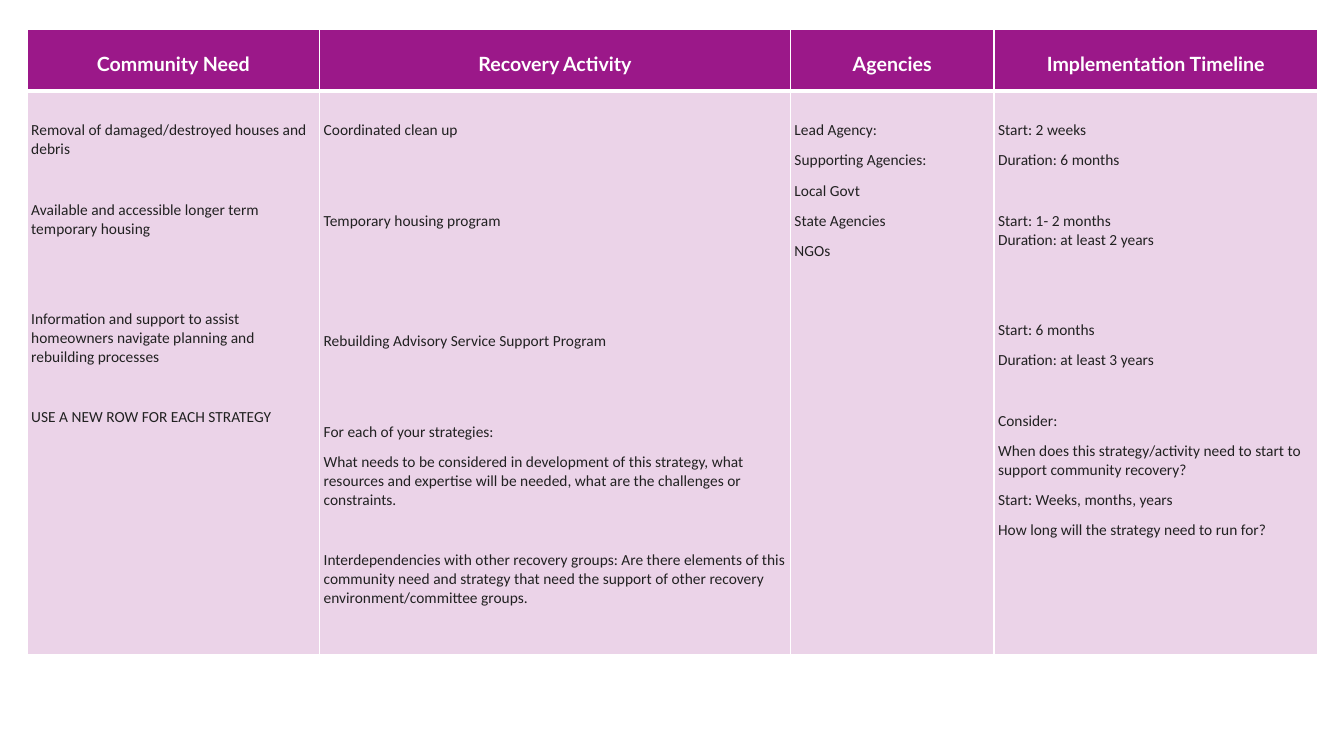
from dataclasses import dataclass
from lxml import etree
from pptx import Presentation
from pptx import util as u
from pptx.dml.color import RGBColor
from pptx.enum import text
from pptx.oxml import ns


@dataclass(frozen=True)
class Face:
    font: str
    size: int
    ink: str
    fill: str
    bold: bool
    align: text.PP_ALIGN
    top: float
    edges: tuple[int, int, int, int]


@dataclass(frozen=True)
class Theme:
    head: Face
    body: Face
    line: str
    after: int
    step: float
    side: float


@dataclass(frozen=True)
class Para:
    words: str
    skip: int = 0


@dataclass(frozen=True)
class Column:
    title: str
    width: float
    paras: tuple[Para, ...]


THEME = Theme(
    head=Face("Lato", 14, "FFFFFF", "9B1889", True, text.PP_ALIGN.CENTER, 0.23, (1, 1, 1, 3)),
    body=Face("Calibri", 11, "212121", "EBD3E8", False, text.PP_ALIGN.LEFT, 0.3, (1, 1, 1, 1)),
    line="FFFFFF",
    after=8,
    step=21.5,
    side=0.04,
)

COLUMNS = (
    Column("Community Need", 2.9, (
        Para("Removal of damaged/destroyed houses and debris"),
        Para("Available and accessible longer term temporary housing", 1),
        Para("Information and support to assist homeowners navigate planning and rebuilding processes", 2),
        Para("USE A NEW ROW FOR EACH STRATEGY", 1),
    )),
    Column("Recovery Activity", 4.67, (
        Para("Coordinated clean up"),
        Para("Temporary housing program", 2),
        Para("Rebuilding Advisory Service Support Program", 3),
        Para("For each of your strategies:", 2),
        Para("What needs to be considered in development of this strategy, what resources "
             "and expertise will be needed, what are the challenges or constraints."),
        Para("Interdependencies with other recovery groups: Are there elements of this "
             "community need and strategy that need the support of other recovery "
             "environment/committee groups.", 1),
    )),
    Column("Agencies", 2.02, (
        Para("Lead Agency:"),
        Para("Supporting Agencies:"),
        Para("Local Govt"),
        Para("State Agencies"),
        Para("NGOs"),
    )),
    Column("Implementation Timeline", 3.21, (
        Para("Start: 2 weeks"),
        Para("Duration: 6 months"),
        Para("Start: 1- 2 months\nDuration: at least 2 years", 1),
        Para("Start: 6 months", 2),
        Para("Duration: at least 3 years"),
        Para("Consider:", 1),
        Para("When does this strategy/activity need to start to support community recovery?"),
        Para("Start: Weeks, months, years"),
        Para("How long will the strategy need to run for?"),
    )),
)
ROWS = (0.61, 5.59)


def add_edges(cell, face: Face) -> None:
    props = cell._tc.get_or_add_tcPr()
    for place, (side, width) in enumerate(zip("LRTB", face.edges)):
        edge = etree.Element(ns.qn(f"a:ln{side}"), w=str(u.Pt(width)))
        solid = etree.SubElement(edge, ns.qn("a:solidFill"))
        etree.SubElement(solid, ns.qn("a:srgbClr"), val=THEME.line)
        props.insert(place, edge)


def add_text(para, words: str, face: Face) -> None:
    for index, line in enumerate(words.split("\n")):
        if index:
            para.add_line_break()
        run = para.add_run()
        run.text = line
        run.font.name = face.font
        run.font.size = u.Pt(face.size)
        run.font.bold = face.bold
        run.font.color.rgb = RGBColor.from_string(face.ink)


def fill_cell(cell, paras: tuple[Para, ...], face: Face) -> None:
    cell.margin_left = cell.margin_right = u.Inches(THEME.side)
    cell.margin_top = u.Inches(face.top)
    cell.margin_bottom = 0
    cell.fill.solid()
    cell.fill.fore_color.rgb = RGBColor.from_string(face.fill)
    add_edges(cell, face)
    frame = cell.text_frame
    for index, item in enumerate(paras):
        para = frame.add_paragraph() if index else frame.paragraphs[0]
        para.alignment = face.align
        para.space_before = u.Pt(item.skip * THEME.step)
        para.space_after = u.Pt(THEME.after)
        add_text(para, item.words, face)


def main() -> None:
    deck = Presentation()
    deck.slide_width, deck.slide_height = u.Inches(13.33), u.Inches(7.5)
    slide = deck.slides.add_slide(deck.slide_layouts[6])
    wide = sum(column.width for column in COLUMNS)
    table = slide.shapes.add_table(
        len(ROWS), len(COLUMNS), u.Inches(0.27), u.Inches(0.29),
        u.Inches(wide), u.Inches(sum(ROWS))).table
    table.horz_banding = False
    for row, height in zip(table.rows, ROWS):
        row.height = u.Inches(height)
    for index, column in enumerate(COLUMNS):
        table.columns[index].width = u.Inches(column.width)
        fill_cell(table.cell(0, index), (Para(column.title),), THEME.head)
        fill_cell(table.cell(1, index), column.paras, THEME.body)
    deck.save("out.pptx")


if __name__ == "__main__":
    main()
